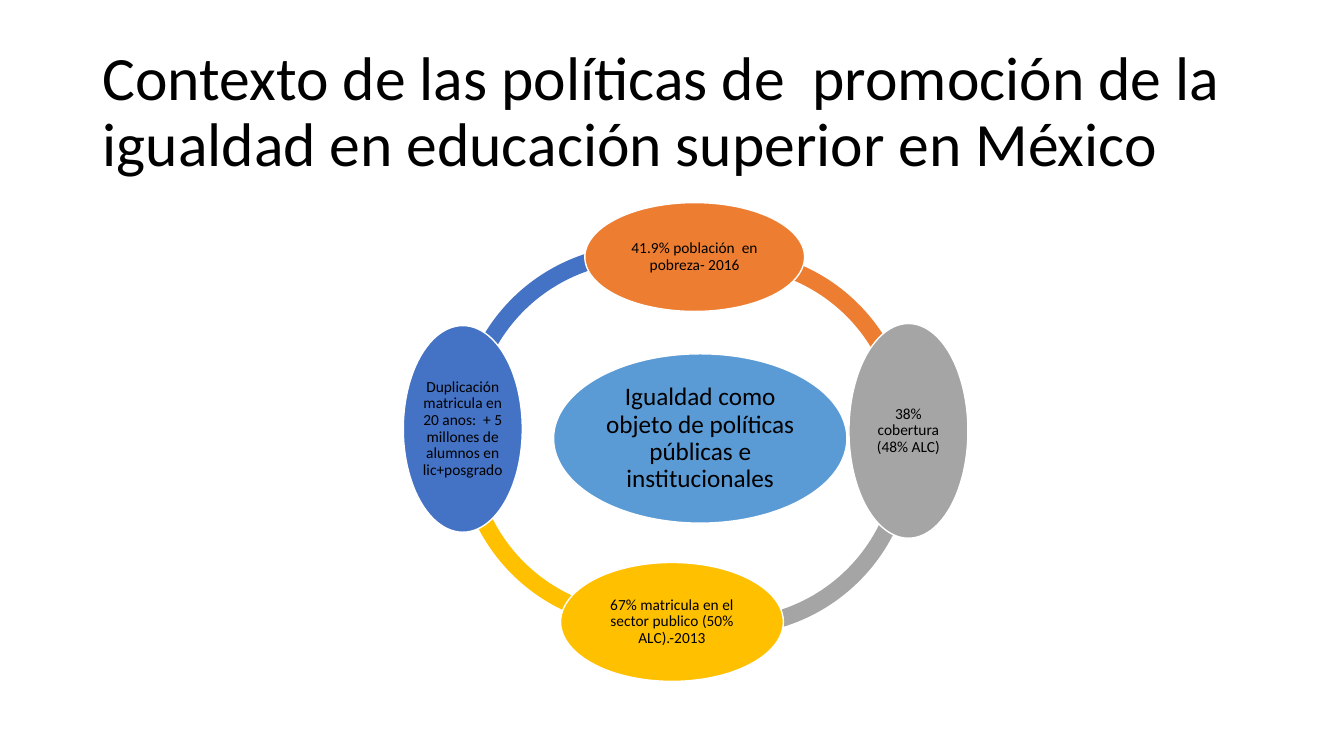
import pptx
import pptx.util
import pptx.dml.color
import pptx.enum.shapes
import pptx.enum.text
from dataclasses import dataclass

SCALE = 9144
KIND = pptx.enum.shapes.MSO_SHAPE
ALIGN = pptx.enum.text.PP_ALIGN


@dataclass(frozen=True)
class Theme:
    """Colours, font and type sizes of the slide."""
    font: str = "Calibri"
    ink: str = "000000"
    edge: str = "FFFFFF"
    core: str = "5B9BD5"
    blue: str = "4472C4"
    gold: str = "FFC000"
    gray: str = "A5A5A5"
    rust: str = "ED7D31"
    title: int = 44
    hub: int = 18
    node: int = 11


THEME = Theme()

ARCS = [
    ((0, 42), THEME.blue, (108.16, 172.12)),
    ((0, 56), THEME.gold, (48.22, 110.89)),
    ((86, 63), THEME.gray, (212.27, 65.07)),
    ((85, 47), THEME.rust, (155.62, 215.4)),
]

NODES = [
    ((180, 0, 218, 108), THEME.rust, "41.9% población  en pobreza- 2016"),
    ((442, 120, 118, 213), THEME.gray, "38% cobertura (48% ALC)"),
    ((156, 357, 221, 118), THEME.gold,
     "67% matricula en el sector publico (50% ALC).-2013"),
    ((0, 122, 118, 205), THEME.blue,
     "Duplicación matricula en 20 anos:  + 5 millones de alumnos en lic+posgrado"),
]


def px(*sizes):
    """Turn px lengths into EMU."""
    return [pptx.util.Emu(size * SCALE) for size in sizes]


def tint(code):
    """Turn a hex code into a colour."""
    return pptx.dml.color.RGBColor.from_string(code)


def write(shape, text, size, align, inset):
    """Set one middle-anchored paragraph in a shape."""
    frame = shape.text_frame
    frame.word_wrap = True
    frame.vertical_anchor = pptx.enum.text.MSO_ANCHOR.MIDDLE
    frame.margin_left, frame.margin_top = px(*inset)
    frame.margin_right, frame.margin_bottom = px(*inset)
    para = frame.paragraphs[0]
    para.text = text
    para.alignment = align
    para.line_spacing = 0.9
    para.font.name = THEME.font
    para.font.size = pptx.util.Pt(size)
    para.font.color.rgb = tint(THEME.ink)


def draw(slide, kind, box, fill):
    """Add a flat filled shape."""
    shape = slide.shapes.add_shape(kind, *px(*box))
    shape.shadow.inherit = False
    shape.fill.solid()
    shape.fill.fore_color.rgb = tint(fill)
    shape.line.fill.background()
    return shape


def bubble(slide, box, fill, text, size, inset):
    """Add an outlined ellipse with its label."""
    shape = draw(slide, KIND.OVAL, box, fill)
    shape.line.color.rgb = tint(THEME.edge)
    shape.line.width = pptx.util.Pt(1)
    write(shape, text, size, ALIGN.CENTER, (inset, inset))


def header(slide, box):
    """Add the slide title."""
    shape = slide.shapes.add_textbox(*px(*box))
    text = "Contexto de las políticas de  promoción de la igualdad en educación superior en México"
    write(shape, text, THEME.title, ALIGN.LEFT, (10, 5))


def cycle(slide, box):
    """Add the ring of arcs, its hub and the four nodes."""
    left, top = box[:2]
    for (x, y), fill, ends in ARCS:
        arc = draw(slide, KIND.BLOCK_ARC, (left + 54 + x, top + y, 366, 366), fill)
        for index, value in enumerate((*ends, 0.046)):
            arc.adjustments[index] = value
    bubble(slide, (left + 149, top + 150, 291, 168), THEME.core,
           "Igualdad como objeto de políticas públicas e institucionales", THEME.hub, 3)
    for (x, y, width, height), fill, text in NODES:
        bubble(slide, (left + x, top + y, width, height), fill, text, THEME.node, 2)


def main():
    """Build and save the slide."""
    deck = pptx.Presentation()
    deck.slide_width, deck.slide_height = px(1333, 750)
    slide = deck.slides.add_slide(deck.slide_layouts[6])
    header(slide, (92, 40, 1150, 145))
    cycle(slide, (400, 201, 560, 475))
    deck.save("out.pptx")


if __name__ == "__main__":
    main()
